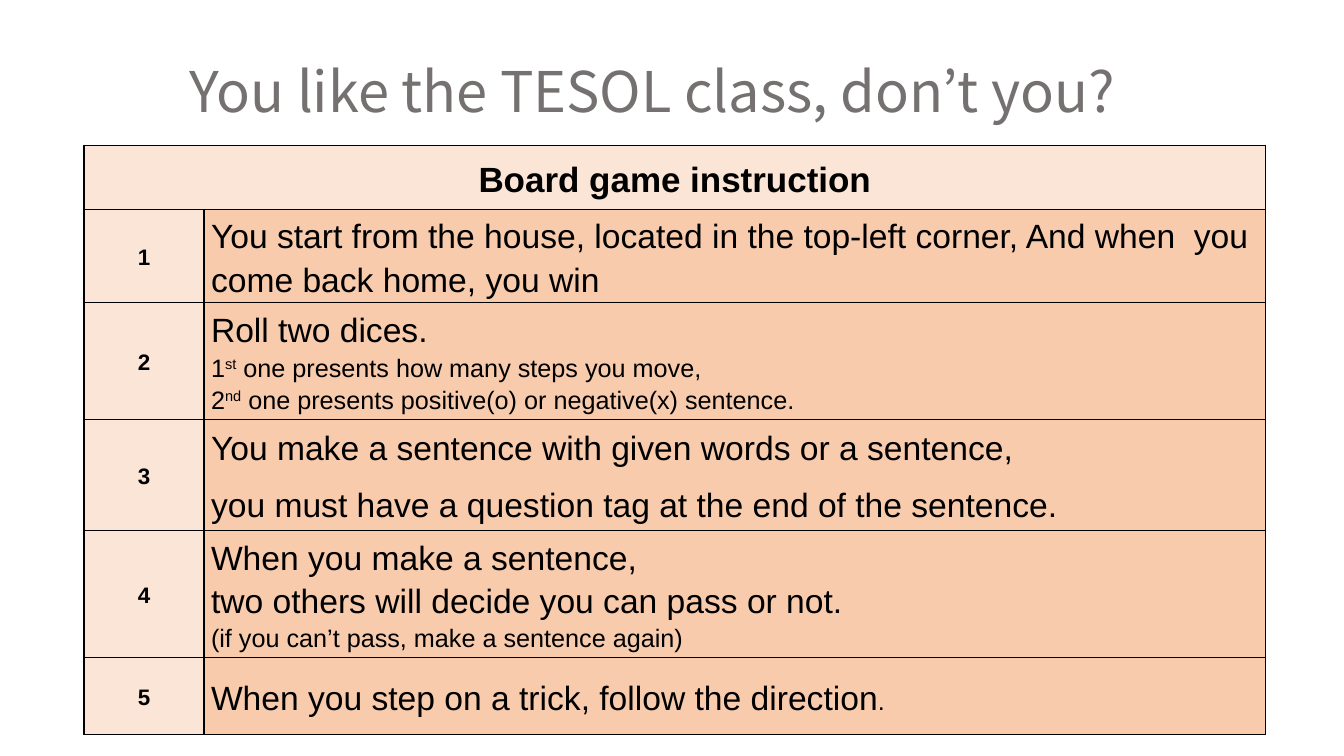
from dataclasses import dataclass

from lxml.etree import SubElement
from pptx import Presentation
from pptx.dml.color import RGBColor
from pptx.enum.text import MSO_ANCHOR as Anchor, MSO_AUTO_SIZE as AutoSize, PP_ALIGN as Align
from pptx.oxml.ns import qn
from pptx.util import Inches, Pt


@dataclass(frozen=True)
class Theme:
    title_font: str = "Noto Sans CJK KR"
    body_font: str = "Arial"
    title_color: str = "767171"
    text_color: str = "000000"
    border_color: str = "000000"
    label_fill: str = "FBE5D6"
    rule_fill: str = "F8CBAD"
    title_size: int = 40
    header_size: int = 25
    rule_size: int = 24
    note_size: int = 18
    number_size: int = 16
    line_spacing: float = 1.15
    paragraph_gap: int = 5
    cell_inset: float = 0.07
    border_width: int = 1
    superscript: str = "30000"


@dataclass(frozen=True)
class Part:
    text: str
    size: int
    raised: bool = False


class SlideBuilder:
    def __init__(self, presentation, theme):
        self.theme = theme
        self.width = presentation.slide_width
        self.height = presentation.slide_height
        self.slide = presentation.slides.add_slide(presentation.slide_layouts[5])

    def across(self, percent):
        return round(self.width * percent / 100)

    def down(self, percent):
        return round(self.height * percent / 100)

    def add_run(self, paragraph, part, font_name, color, bold=False):
        run = paragraph.add_run()
        run.text = part.text
        run.font.name = font_name
        run.font.size = Pt(part.size)
        run.font.bold = bold
        run.font.color.rgb = RGBColor.from_string(color)
        properties = run.font._element
        SubElement(properties, qn("a:ea"), typeface=font_name)
        if part.raised:
            properties.set("baseline", self.theme.superscript)

    def title(self, text, left, top, width, height):
        shape = self.slide.shapes.title
        shape.left, shape.top = self.across(left), self.down(top)
        shape.width, shape.height = self.across(width), self.down(height)
        frame = shape.text_frame
        frame.word_wrap = True
        frame.auto_size = AutoSize.SHAPE_TO_FIT_TEXT
        frame.vertical_anchor = Anchor.MIDDLE
        paragraph = frame.paragraphs[0]
        paragraph.alignment = Align.CENTER
        self.add_run(paragraph, Part(text, self.theme.title_size),
                     self.theme.title_font, self.theme.title_color)

    def border(self, cell):
        properties = cell._tc.get_or_add_tcPr()
        for side in ("lnL", "lnR", "lnT", "lnB"):
            line = SubElement(properties, qn(f"a:{side}"), w=str(Pt(self.theme.border_width)))
            fill = SubElement(line, qn("a:solidFill"))
            SubElement(fill, qn("a:srgbClr"), val=self.theme.border_color)

    def cell(self, cell, lines, fill, label=False, spaced=True):
        theme = self.theme
        cell.fill.solid()
        cell.fill.fore_color.rgb = RGBColor.from_string(fill)
        cell.vertical_anchor = Anchor.MIDDLE
        cell.margin_left = cell.margin_right = Inches(theme.cell_inset)
        cell.margin_top = cell.margin_bottom = 0
        frame = cell.text_frame
        for index, parts in enumerate(lines):
            paragraph = frame.add_paragraph() if index else frame.paragraphs[0]
            paragraph.alignment = Align.CENTER if label else Align.LEFT
            paragraph.line_spacing = theme.line_spacing
            gap = Pt(theme.paragraph_gap if spaced else 0)
            paragraph.space_before = paragraph.space_after = gap
            for part in parts:
                self.add_run(paragraph, part, theme.body_font, theme.text_color, label)

    def instructions(self, header, rules, left, top, columns, rows):
        theme = self.theme
        frame = self.slide.shapes.add_table(
            len(rows), len(columns), self.across(left), self.down(top),
            self.across(sum(columns)), self.down(sum(rows)))
        table = frame.table
        table.first_row = table.horz_banding = False
        for column, share in zip(table.columns, columns):
            column.width = self.across(share)
        for row, share in zip(table.rows, rows):
            row.height = self.down(share)
        for cell in table.iter_cells():
            self.border(cell)
        table.cell(0, 0).merge(table.cell(0, 1))
        self.cell(table.cell(0, 0), [[Part(header, theme.header_size)]], theme.label_fill, label=True)
        for number, (lines, spaced) in enumerate(rules, 1):
            self.cell(table.cell(number, 0), [[Part(str(number), theme.number_size)]],
                      theme.label_fill, label=True)
            self.cell(table.cell(number, 1), lines, theme.rule_fill, spaced=spaced)


def main():
    presentation = Presentation()
    presentation.slide_width = Inches(13.33)
    presentation.slide_height = Inches(7.5)
    theme = Theme()
    builder = SlideBuilder(presentation, theme)

    def rule(text):
        return [Part(text, theme.rule_size)]

    def note(text):
        return [Part(text, theme.note_size)]

    def ordinal(digit, suffix, text):
        return note(digit) + [Part(suffix, theme.note_size, raised=True)] + note(text)

    rules = [
        ([rule("You start from the house, located in the top-left corner, "
               "And when  you come back home, you win")], True),
        ([rule("Roll two dices."),
          ordinal("1", "st", " one presents how many steps you move,"),
          ordinal("2", "nd", " one presents positive(o) or negative(x) sentence.")], False),
        ([rule("You make a sentence with given words or a sentence,"),
          rule("you must have a question tag at the end of the sentence.")], True),
        ([rule("When you make a sentence,"),
          rule("two others will decide you can pass or not."),
          note("(if you can’t pass, make a sentence again)")], False),
        ([rule("When you step on a trick, follow the direction") + note(".")], True),
    ]
    builder.instructions("Board game instruction", rules, left=6.25, top=19.2,
                         columns=(8.93, 78.97),
                         rows=(8.53, 12.27, 15.47, 14.67, 16, 10.13))
    builder.title("You like the TESOL class, don’t you?",
                  left=12, top=6.8, width=73.07, height=10.27)
    presentation.save("out.pptx")


if __name__ == "__main__":
    main()
